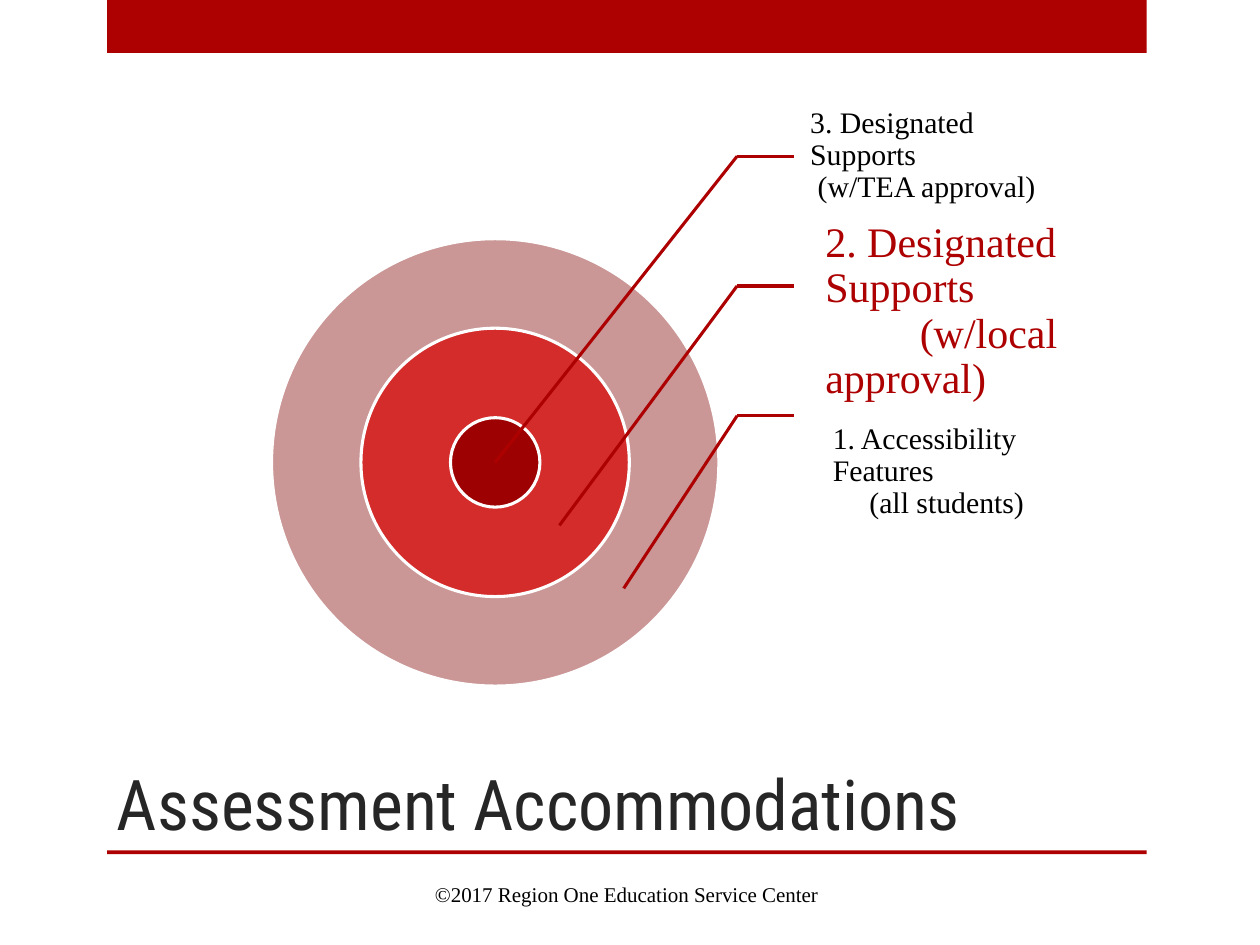
from dataclasses import dataclass

from pptx import Presentation
from pptx.dml.color import RGBColor
from pptx.enum.shapes import MSO_CONNECTOR, MSO_SHAPE
from pptx.enum.text import MSO_ANCHOR, PP_ALIGN
from pptx.oxml.ns import qn
from pptx.util import Inches, Pt


@dataclass(frozen=True)
class Theme:
    accent: str = "AD0101"
    title: str = "262626"
    text: str = "000000"
    white: str = "FFFFFF"
    rings: tuple = ("CA9696", "D42B2B", "9D0101")
    heading_font: str = "Roboto Condensed"
    body_font: str = "Times New Roman"
    title_size: float = 40
    strong_size: float = 24
    label_size: float = 17
    footer_size: float = 12
    line_width: float = 1.75


class SlideBuilder:
    def __init__(self, slide, theme):
        self.s = slide
        self.theme = theme

    def shape(self, kind, box, fill, outline=None):
        sp = self.s.shapes.add_shape(kind, *map(Inches, box))
        sp.shadow.inherit = False
        sp.fill.solid()
        sp.fill.fore_color.rgb = RGBColor.from_string(fill)
        if outline:
            sp.line.color.rgb = RGBColor.from_string(outline)
            sp.line.width = Pt(self.theme.line_width)
        else:
            sp.line.fill.background()

    def line(self, start, end):
        sp = self.s.shapes.add_connector(
            MSO_CONNECTOR.STRAIGHT, *map(Inches, (*start, *end)))
        sp.line.color.rgb = RGBColor.from_string(self.theme.accent)
        sp.line.width = Pt(self.theme.line_width)
        pr = sp._element.spPr
        pr.append(pr.makeelement(qn("a:effectLst"), {}))

    def text(self, box, lines, size, color, font=None, anchor=MSO_ANCHOR.MIDDLE,
             align=PP_ALIGN.LEFT, insets=(0.1, 0.05, 0.1, 0.05), spacing=1.0,
             indent=0):
        """Add a text box; indent moves the first line of later paragraphs."""
        tf = self.s.shapes.add_textbox(*map(Inches, box)).text_frame
        tf.word_wrap = True
        tf.vertical_anchor = anchor
        (tf.margin_left, tf.margin_top,
         tf.margin_right, tf.margin_bottom) = map(Inches, insets)
        tf.text = "\n".join(lines)
        for i, p in enumerate(tf.paragraphs):
            p.alignment = align
            p.line_spacing = spacing
            if i and indent:
                pr = p._p.get_or_add_pPr()
                pr.set("marL", "0")
                pr.set("indent", str(Inches(indent)))
            for r in p.runs:
                r.font.name = font or self.theme.body_font
                r.font.size = Pt(size)
                r.font.color.rgb = RGBColor.from_string(color)


def main():
    prs = Presentation()
    prs.slide_width, prs.slide_height = Inches(10), Inches(7.5)
    theme = Theme()
    b = SlideBuilder(prs.slides.add_slide(prs.slide_layouts[6]), theme)

    for top, height in ((0, 0.42), (6.75, 0.03)):
        b.shape(MSO_SHAPE.RECTANGLE, (0.85, top, 8.25, height), theme.accent)
    b.text((0.83, 5, 7.42, 1.75), ["Assessment Accommodations"],
           theme.title_size, theme.title, theme.heading_font, MSO_ANCHOR.BOTTOM)
    b.text((0.87, 6.9, 8.21, 0.4), ["©2017 Region One Education Service Center"],
           theme.footer_size, theme.text, align=PP_ALIGN.CENTER)

    cx, cy, core = 3.93, 3.67, 0.71
    for fill, factor in zip(theme.rings, (5, 3, 1)):
        d = core * factor
        b.shape(MSO_SHAPE.OVAL, (cx - d / 2, cy - d / 2, d, d), fill, theme.white)

    # box, lines, size, colour, left and right inset, indent of the second line
    labels = (
        ((6.3, 0.72, 2.28, 1.03), ("3. Designated Supports", "(w/TEA approval)"),
         theme.label_size, theme.text, 0.13, 0.27, 0.06),
        ((6.36, 1.96, 2.27, 1.03), ("2. Designated Supports", "(w/local approval)"),
         theme.strong_size, theme.accent, 0.19, 0.03, 0.75),
        ((6.48, 3.23, 1.77, 1.03), ("1. Accessibility Features", "(all students)"),
         theme.label_size, theme.text, 0.13, 0.02, 0.29),
    )
    elbow_x, label_x, first_y, pitch = 5.85, 6.3, 1.24, 1.03
    for i, (box, lines, size, color, left, right, indent) in enumerate(labels):
        b.text(box, lines, size, color, insets=(left, 0.02, right, 0.02),
               spacing=0.9, indent=indent)
        elbow = (elbow_x, first_y + i * pitch)
        b.line(elbow, (label_x, elbow[1]))
        b.line(elbow, (cx + i * 0.51, cy + i * 0.5))

    prs.save("out.pptx")


if __name__ == "__main__":
    main()
